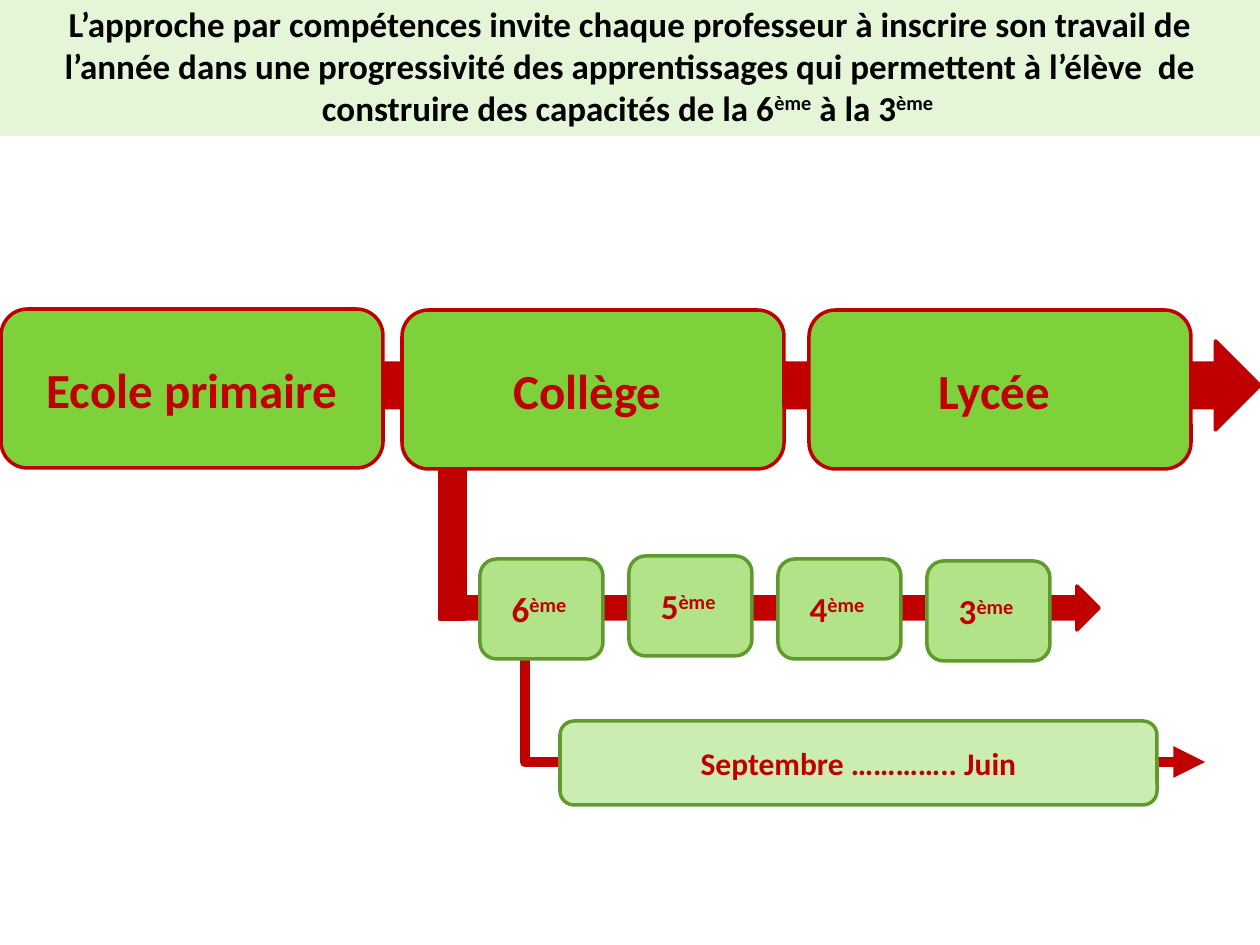
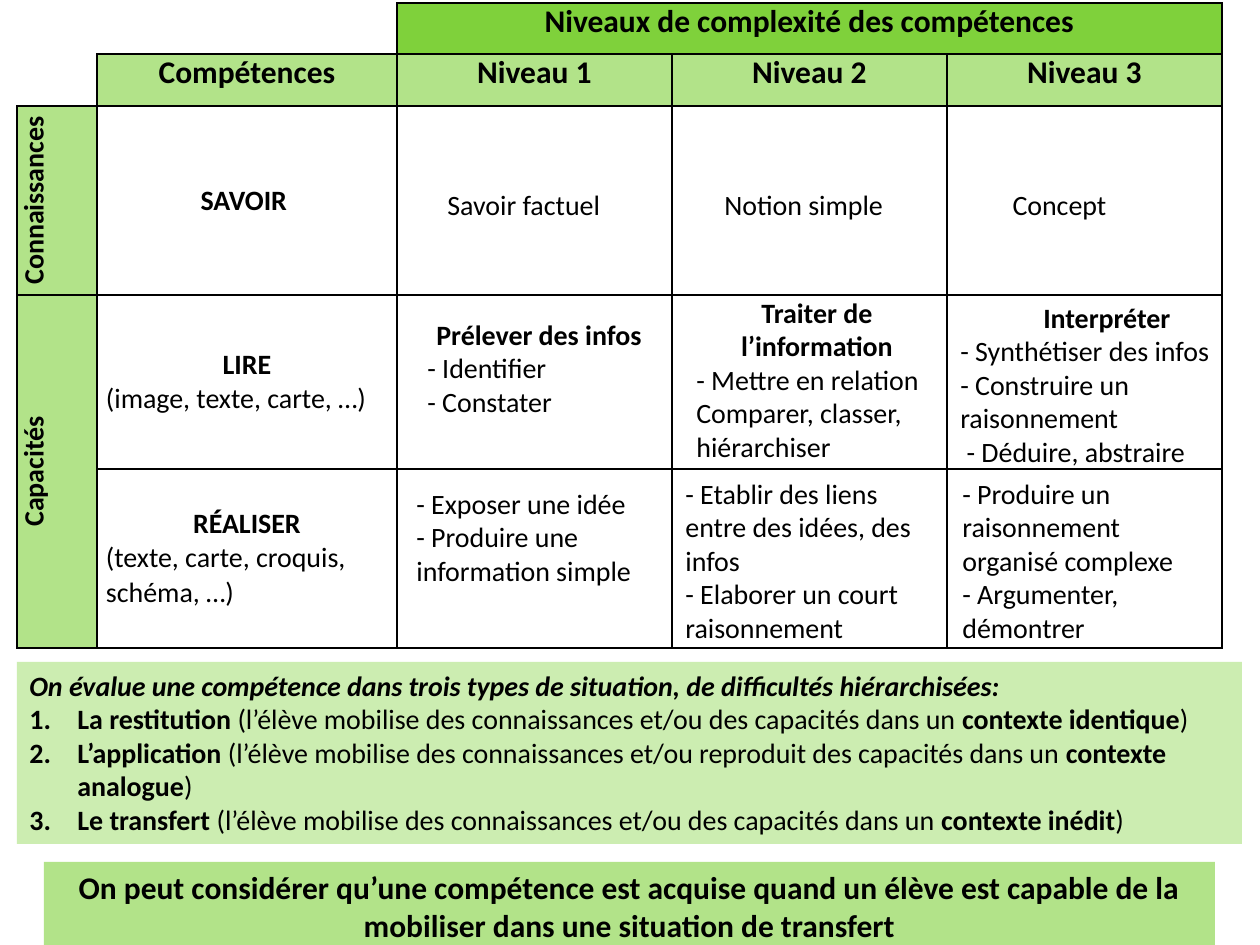
from collections import namedtuple
from functools import partial
from itertools import product

from lxml.etree import SubElement
from pptx import Presentation
from pptx.dml.color import RGBColor
from pptx.enum.shapes import MSO_CONNECTOR as Connector, MSO_SHAPE as Shape
from pptx.enum.text import MSO_ANCHOR as Anchor, PP_ALIGN as Align
from pptx.oxml.ns import qn
from pptx.util import Emu, Pt

EMU_PER_PX = 914400 / 126
FONT = "Calibri"
BLACK, RED, WHITE = "000000", "C00000", "FFFFFF"
GREEN, MID_GREEN, SOFT_GREEN, PALE_GREEN = "7FD13B", "B2E389", "CCEDB1", "E5F6D8"
DARK_GREEN = "5E9B2C"
NO_TABLE_STYLE = "{2D5ABB26-0587-4C30-8999-92F81FD0307C}"

Line = namedtuple("Line", "text align bold italic numbered",
                  defaults=(Align.LEFT, False, False, False))
heading = partial(Line, align=Align.CENTER, bold=True)
numbered = partial(Line, numbered=True)


def px(length):
    return Emu(round(length * EMU_PER_PX))


def color(hex_value):
    return RGBColor.from_string(hex_value)


def apply_format(target, values):
    for name, value in values.items():
        setattr(target, name, value)


def paint(fill, hex_value):
    if hex_value:
        fill.solid()
        fill.fore_color.rgb = color(hex_value)
    else:
        fill.background()


def add_run(paragraph, text, size, hex_value, bold, italic, raised):
    run = paragraph.add_run()
    run.text = text
    apply_format(run.font, {"name": FONT, "size": Pt(size), "bold": bold, "italic": italic})
    run.font.color.rgb = color(hex_value)
    if raised:
        run.font._element.set("baseline", "30000")


def number_paragraph(paragraph):
    properties = paragraph._p.get_or_add_pPr()
    indent = px(48)
    properties.set("marL", str(indent))
    properties.set("indent", str(-indent))
    SubElement(properties, qn("a:buFont"), typeface="+mj-lt")
    SubElement(properties, qn("a:buAutoNum"), type="arabicPeriod")


def write_lines(frame, lines, size, hex_value=BLACK):
    """In a line, * switches bold and ^ switches superscript."""
    for index, line in enumerate(lines):
        paragraph = frame.add_paragraph() if index else frame.paragraphs[0]
        paragraph.alignment = line.align
        if line.numbered:
            number_paragraph(paragraph)
        for bold_index, bold_part in enumerate(line.text.split("*")):
            bold = line.bold != bool(bold_index % 2)
            for raised_index, part in enumerate(bold_part.split("^")):
                if part:
                    add_run(paragraph, part, size, hex_value, bold, line.italic, raised_index % 2)


def add_block(slide, kind, box, fill, outline=None, lines=(), size=18,
              text_color=BLACK, anchor=Anchor.TOP):
    shape = slide.shapes.add_shape(kind, *map(px, box))
    shape.shadow.inherit = False
    paint(shape.fill, fill)
    paint(shape.line.fill, outline)
    if outline:
        shape.line.width = Pt(2)
    apply_format(shape.text_frame, {"word_wrap": True, "vertical_anchor": anchor})
    write_lines(shape.text_frame, lines, size, text_color)


def add_step(slide, box, label, fill, outline, size):
    add_block(slide, Shape.ROUNDED_RECTANGLE, box, fill, outline,
              [heading(label)], size, RED, Anchor.MIDDLE)


def add_note(slide, box, lines):
    frame = slide.shapes.add_textbox(*map(px, box)).text_frame
    frame.word_wrap = True
    write_lines(frame, lines, 16)


def add_elbow_arrow(slide, ends, bend):
    connector = slide.shapes.add_connector(Connector.ELBOW, *map(px, ends))
    connector.line.color.rgb = color(RED)
    connector.line.width = Pt(6)
    properties = connector._element.spPr
    guides = properties.find(qn("a:prstGeom")).get_or_add_avLst()
    SubElement(guides, qn("a:gd"), name="adj1", fmla=f"val {bend}")
    SubElement(properties.find(qn("a:ln")), qn("a:tailEnd"), type="triangle")
    SubElement(properties, qn("a:effectLst"))


def draw_borders(cell, sides):
    properties = cell._tc.get_or_add_tcPr()
    for side in sides:
        border = SubElement(properties, qn(f"a:ln{side}"), w=str(Pt(1)))
        fill = SubElement(border, qn("a:solidFill"))
        SubElement(fill, qn("a:srgbClr"), val=BLACK)


def fill_cell(cell, lines=(), size=16, fill=None, anchor=Anchor.MIDDLE, upright=False):
    paint(cell.fill, fill)
    cell.vertical_anchor = anchor
    if upright:
        cell._tc.get_or_add_tcPr().set("vert", "vert270")
    write_lines(cell.text_frame, lines, size)


def add_skills_table(slide):
    columns, rows = [80, 300, 275, 275, 275], [51, 52, 189, 174, 179]
    frame = slide.shapes.add_table(len(rows), len(columns), px(17), px(3),
                                   px(sum(columns)), px(sum(rows)))
    table = frame.table
    table._tbl.tblPr.find(qn("a:tableStyleId")).text = NO_TABLE_STYLE
    apply_format(table, {"first_row": False, "horz_banding": False})
    for column, width in zip(table.columns, columns):
        column.width = px(width)
    for row, height in zip(table.rows, rows):
        row.height = px(height)

    partial_borders = {(0, 0): "R", (0, 1): "R", (1, 0): "RB"}
    for position in product(range(len(rows)), range(len(columns))):
        cell = table.cell(*position)
        apply_format(cell, {"margin_left": px(9), "margin_right": px(9),
                            "margin_top": 0, "margin_bottom": 0})
        draw_borders(cell, partial_borders.get(position, "LRTB"))

    for first, last in [((0, 0), (0, 1)), ((0, 2), (0, 4)), ((3, 0), (4, 0))]:
        table.cell(*first).merge(table.cell(*last))

    fill_cell(table.cell(0, 2), [heading("Niveaux de complexité des compétences")],
              18, GREEN, Anchor.TOP)
    for column, label in enumerate(["Compétences", "Niveau 1", "Niveau 2", "Niveau 3"], 1):
        fill_cell(table.cell(1, column), [heading(label)], 18, MID_GREEN, Anchor.TOP)
    for row, label in [(2, "Connaissances"), (3, "Capacités")]:
        fill_cell(table.cell(row, 0), [heading(label)], fill=MID_GREEN, upright=True)
    skills = [
        [heading("SAVOIR ")],
        [heading("LIRE"), Line("(image, texte, carte, …)")],
        [heading("RÉALISER"), Line("(texte, carte, croquis,"), Line("schéma, …)")],
    ]
    for row, lines in enumerate(skills, 2):
        fill_cell(table.cell(row, 1), lines)


def build_progression(slide):
    add_elbow_arrow(slide, (520, 658, 1205, 762), 730)
    add_block(slide, Shape.RIGHT_ARROW, (440, 586, 659, 44), RED, RED)
    add_block(slide, Shape.RIGHT_ARROW, (0, 341, 1260, 89), RED, RED)
    add_block(slide, Shape.RECTANGLE, (0, -4, 1260, 140), PALE_GREEN, lines=[heading(
        "L’approche par compétences invite chaque professeur à inscrire son travail de "
        "l’année dans une progressivité des apprentissages qui permettent à l’élève  de "
        "construire des capacités de la 6^ème^ à la 3^ème ^")], size=20)
    schools = [(1, 309, "Ecole primaire"), (402, 310, "Collège "), (809, 310, "Lycée ")]
    for left, top, label in schools:
        add_step(slide, (left, top, 382, 159), label, GREEN, RED, 28)
    for index, top in enumerate([559, 556, 559, 561]):
        add_step(slide, (480 + 149 * index, top, 123, 100), f"{6 - index}^ème ^",
                 MID_GREEN, DARK_GREEN, 20)
    add_block(slide, Shape.RECTANGLE, (440, 470, 25, 149), RED, RED)
    add_step(slide, (560, 721, 597, 84), "Septembre ………….. Juin", SOFT_GREEN, DARK_GREEN, 18)


def build_levels(slide):
    add_skills_table(slide)
    notes = [
        ((435, 181, 189, 47), [Line("Savoir factuel")]),
        ((712, 181, 189, 47), [Line("Notion simple")]),
        ((990, 181, 139, 47), [Line("Concept", Align.CENTER)]),
        ((415, 311, 248, 115), [heading("Prélever des infos"), Line("- Identifier"),
                                Line("- Constater")]),
        ((684, 289, 266, 183), [heading("Traiter de l’information"),
                                Line("- Mettre en relation"),
                                Line("Comparer, classer, hiérarchiser")]),
        ((948, 294, 318, 183), [heading("Interpréter"), Line("- Synthétiser des infos"),
                                Line("- Construire un raisonnement"),
                                Line(" - Déduire, abstraire")]),
        ((404, 480, 268, 115), [Line("- Exposer une idée"),
                                Line("- Produire une information simple")]),
        ((673, 470, 268, 183), [Line("- Etablir des liens entre des idées, des infos"),
                                Line("- Elaborer un court raisonnement")]),
        ((950, 470, 268, 183), [Line("- Produire un raisonnement organisé complexe"),
                                Line("- Argumenter, démontrer")]),
    ]
    for box, lines in notes:
        add_note(slide, box, lines)
    add_block(slide, Shape.RECTANGLE, (17, 662, 1225, 182), SOFT_GREEN, size=16, lines=[
        Line("On évalue une compétence dans trois types de situation, "
             "de difficultés hiérarchisées:", bold=True, italic=True),
        numbered("*La restitution *(l’élève mobilise des connaissances et/ou des capacités "
                 "dans un *contexte identique*)"),
        numbered("*L’application *(l’élève mobilise des connaissances et/ou reproduit des "
                 "capacités dans un *contexte analogue*)"),
        numbered("*Le transfert *(l’élève mobilise des connaissances et/ou des capacités "
                 "dans un *contexte inédit*)"),
    ])
    add_block(slide, Shape.RECTANGLE, (44, 862, 1171, 89), MID_GREEN, lines=[heading(
        "On peut considérer qu’une compétence est acquise quand un élève est capable "
        "de la mobiliser dans une situation de transfert")])


def main():
    presentation = Presentation()
    apply_format(presentation, {"slide_width": px(1260), "slide_height": px(945)})
    for build in (build_progression, build_levels):
        slide = presentation.slides.add_slide(presentation.slide_layouts[6])
        paint(slide.background.fill, WHITE)
        build(slide)
    presentation.save("out.pptx")


if __name__ == "__main__":
    main()
